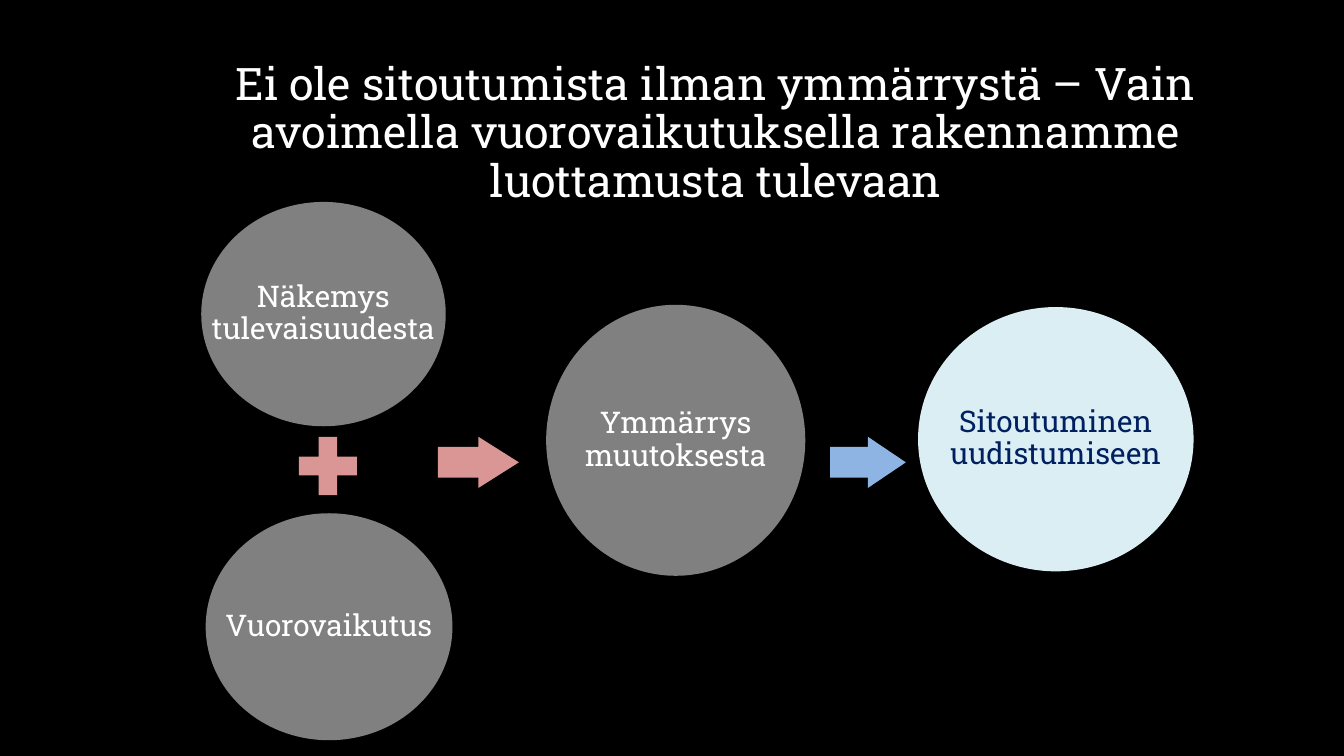
from pptx import Presentation
from pptx.dml.color import RGBColor
from pptx.enum.shapes import MSO_SHAPE
from pptx.enum.text import MSO_ANCHOR, PP_ALIGN
from pptx.util import Pt

COLORS = {
    "background": "000000",
    "text": "FFFFFF",
    "circle": "808080",
    "goal": "DBEEF4",
    "goal_text": "002060",
    "cause": "D99694",
    "result": "8EB4E3",
}


class SlideBuilder:
    font_name = "Roboto Slab"
    title_size = 24
    label_size = 16
    line_spacing = 0.9

    def __init__(self, slide):
        self.slide = slide

    def color(self, name):
        return RGBColor.from_string(COLORS[name])

    def background(self, color):
        fill = self.slide.background.fill
        fill.solid()
        fill.fore_color.rgb = self.color(color)

    def add_text(self, frame, lines, size, color):
        """Fill a frame with one centred paragraph, broken between lines."""
        frame.vertical_anchor = MSO_ANCHOR.MIDDLE
        paragraph = frame.paragraphs[0]
        paragraph.alignment = PP_ALIGN.CENTER
        paragraph.line_spacing = self.line_spacing
        for index, line in enumerate(lines):
            if index:
                paragraph.add_line_break()
            run = paragraph.add_run()
            run.text = line
            run.font.name = self.font_name
            run.font.size = Pt(size)
            run.font.color.rgb = self.color(color)

    def title(self, text, left, top, width, height):
        box = self.slide.shapes.add_textbox(Pt(left), Pt(top), Pt(width), Pt(height))
        box.text_frame.word_wrap = True
        self.add_text(box.text_frame, [text], self.title_size, "text")

    def shape(self, kind, left, top, width, height, color):
        shape = self.slide.shapes.add_shape(
            kind, Pt(left), Pt(top), Pt(width), Pt(height))
        shape.shadow.inherit = False
        shape.fill.solid()
        shape.fill.fore_color.rgb = self.color(color)
        shape.line.fill.background()
        return shape

    def circle(self, lines, left, top, width, height, color="circle", text_color="text"):
        frame = self.shape(MSO_SHAPE.OVAL, left, top, width, height, color).text_frame
        frame.word_wrap = False
        self.add_text(frame, lines, self.label_size, text_color)

    def plus(self, left, top, size, color):
        self.shape(MSO_SHAPE.MATH_PLUS, left, top, size, size, color)

    def arrow(self, left, width, color):
        """Arrow on the common row, with a head half as long as the arrow."""
        top, height = 234, 27.4
        arrow = self.shape(MSO_SHAPE.RIGHT_ARROW, left, top, width, height, color)
        arrow.adjustments[0] = 0.6
        arrow.adjustments[1] = width / 2 / height


def main():
    presentation = Presentation()
    presentation.slide_width = Pt(720)
    presentation.slide_height = Pt(405)
    builder = SlideBuilder(presentation.slides.add_slide(presentation.slide_layouts[6]))

    builder.background("background")
    builder.title(
        "Ei ole sitoutumista ilman ymmärrystä – Vain avoimella "
        "vuorovaikutuksella rakennamme luottamusta tulevaan",
        77.8, 35.3, 611.3, 73.4)
    builder.circle(["Näkemys", "tulevaisuudesta"], 107.8, 108.2, 131, 120.2)
    builder.plus(154.5, 228.5, 42.4, "cause")
    builder.circle(["Vuorovaikutus"], 110.2, 275, 132.2, 121.6)
    builder.arrow(234.6, 43.4, "cause")
    builder.circle(["Ymmärrys", "muutoksesta"], 292.6, 163.3, 138.8, 145.2)
    builder.circle(["Sitoutuminen", "uudistumiseen"], 491.8, 164.5, 147.6, 141.6,
                   "goal", "goal_text")
    builder.arrow(444.7, 40.6, "result")

    presentation.save("out.pptx")


if __name__ == "__main__":
    main()
